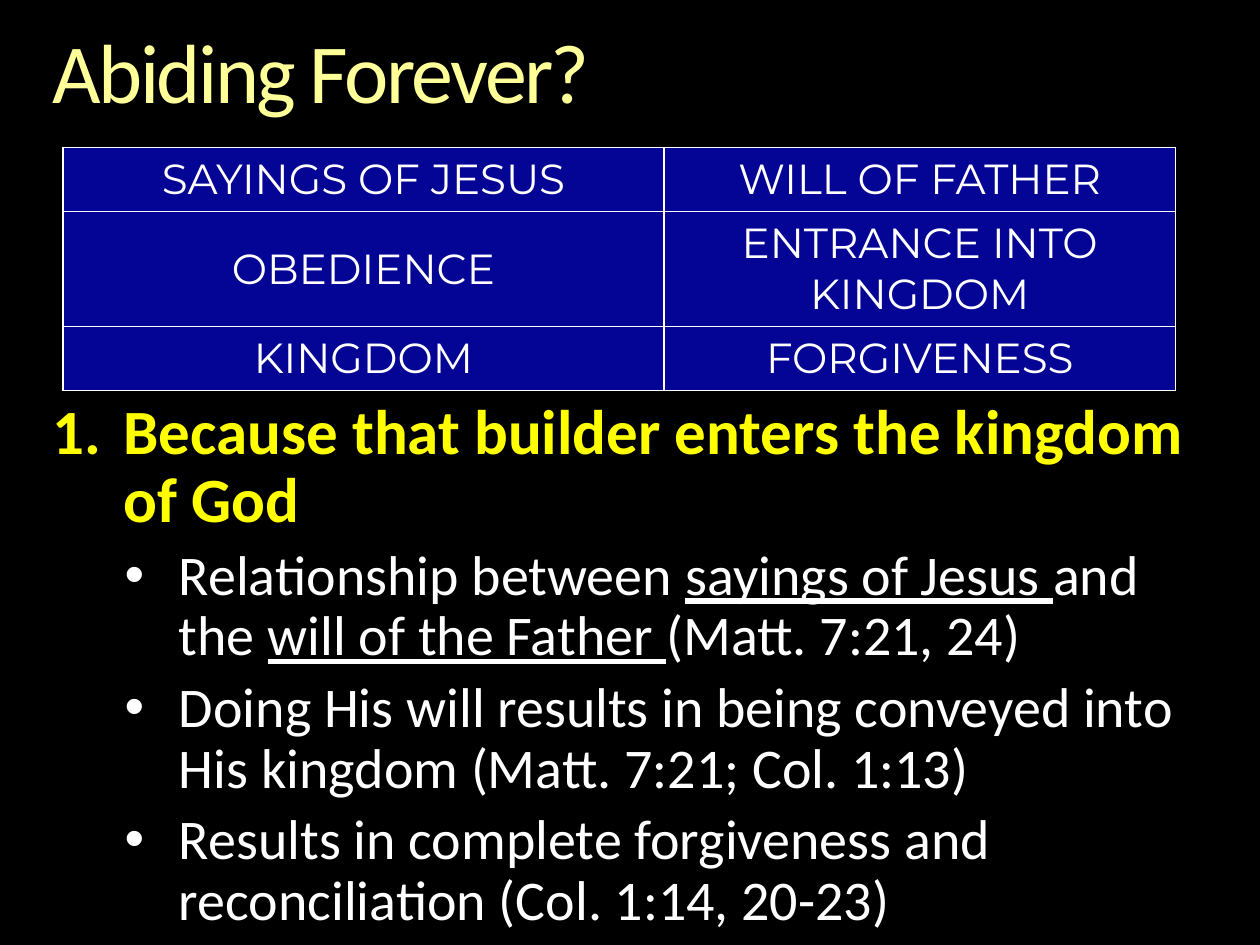
"""Build the 'Abiding Forever?' slide: a title, a comparison table and a numbered point."""
from dataclasses import dataclass
from typing import Any

from lxml import etree
from pptx import Presentation
from pptx import util as u
from pptx.dml.color import RGBColor
from pptx.enum import text
from pptx.oxml import ns

WIDTH, HEIGHT = u.Inches(10), u.Inches(7.5)
COLORS = {"back": "000000", "title": "FFFF99", "point": "FFFF00",
          "body": "FFFFFF", "cell": "050595", "border": "FFFFFF"}
FORMATS = {
    "title": {"name": "Calibri", "size": u.Pt(48)},
    "point": {"name": "Calibri", "size": u.Pt(36), "bold": True},
    "body": {"name": "Calibri", "size": u.Pt(32)},
    "cell": {"name": "Montserrat", "size": u.Pt(24)},
}
NO_INSETS = {f"margin_{side}": 0 for side in ("left", "top", "right", "bottom")}
COLUMN_SHARES = (0.54, 0.46)
ROW_HEIGHTS = (0.51, 0.91, 0.51)
ROWS = (
    ("SAYINGS OF JESUS", "WILL OF FATHER"),
    ("OBEDIENCE", "ENTRANCE INTO KINGDOM"),
    ("KINGDOM", "FORGIVENESS"),
)


@dataclass(frozen=True)
class Area:
    """A rectangle given as shares of the slide's size."""
    left: float
    top: float
    width: float
    height: float

    def lengths(self) -> tuple[int, ...]:
        """Return left, top, width and height in slide units."""
        return (int(self.left * WIDTH), int(self.top * HEIGHT),
                int(self.width * WIDTH), int(self.height * HEIGHT))


@dataclass(frozen=True)
class Marker:
    """A list marker with its text margin and hanging width in inches."""
    tag: str
    values: dict[str, str]
    margin: float
    hang: float


@dataclass(frozen=True)
class Line:
    """A paragraph whose spans alternate between plain and underlined."""
    spans: tuple[str, ...]
    style: str
    marker: Marker | None = None
    before: float = 0


TITLE_AREA = Area(0.042, 0.033, 0.917, 0.097)
TABLE_AREA = Area(0.05, 0.156, 0.883, 0.257)
BODY_AREA = Area(0.042, 0.423, 0.917, 0.577)
NUMBER = Marker("a:buAutoNum", {"type": "arabicPeriod"}, 0.56, 0.56)
BULLET = Marker("a:buChar", {"char": "•"}, 1, 0.43)
DETAILS = (
    ("Relationship between ", "sayings of Jesus ", "and the ",
     "will of the Father ", "(Matt. 7:21, 24)"),
    ("Doing His will results in being conveyed into His kingdom (Matt. 7:21; Col. 1:13)",),
    ("Results in complete forgiveness and reconciliation (Col. 1:14, 20-23)",),
)
BODY = [Line(("Because that builder enters the kingdom of God",), "point", NUMBER)]
BODY += [Line(spans, "body", BULLET, 6.4) for spans in DETAILS]


def apply(target: Any, values: dict[str, Any]) -> None:
    """Set each named attribute on the target."""
    for name, value in values.items():
        setattr(target, name, value)


def add_span(para: Any, words: str, style: str) -> Any:
    """Append a styled span to a paragraph."""
    span = para.add_run()
    span.text = words
    apply(span.font, FORMATS[style])
    span.font.color.rgb = RGBColor.from_string(COLORS[style])
    return span


def mark(para: Any, marker: Marker) -> None:
    """Give a paragraph its list marker and hanging indent."""
    props = para._p.get_or_add_pPr()
    props.set("marL", str(u.Inches(marker.margin)))
    props.set("indent", str(-u.Inches(marker.hang)))
    etree.SubElement(props, ns.qn("a:buFont"), typeface="Calibri" if marker is NUMBER else "Arial")
    etree.SubElement(props, ns.qn(marker.tag), marker.values)


def add_text(page: Any, area: Area, lines: list[Line]) -> Any:
    """Add a text box without insets and fill it with lines."""
    box = page.shapes.add_textbox(*area.lengths())
    frame = box.text_frame
    apply(frame, {**NO_INSETS, "word_wrap": True})
    for index, line in enumerate(lines):
        para = frame.add_paragraph() if index else frame.paragraphs[0]
        if line.marker:
            mark(para, line.marker)
        apply(para, {"line_spacing": 0.9, "space_before": u.Pt(line.before)})
        for place, words in enumerate(line.spans):
            span = add_span(para, words, line.style)
            if place % 2:
                span.font.underline = True
    return box


def outline(cell: Any) -> None:
    """Draw a one-point border on every side of a cell."""
    props = cell._tc.get_or_add_tcPr()
    for side in "LRTB":
        edge = etree.SubElement(props, ns.qn(f"a:ln{side}"), w=str(u.Pt(1)))
        fill = etree.SubElement(edge, ns.qn("a:solidFill"))
        etree.SubElement(fill, ns.qn("a:srgbClr"), val=COLORS["border"])


def add_grid(page: Any, area: Area) -> None:
    """Add the comparison table."""
    lengths = area.lengths()
    table = page.shapes.add_table(len(ROWS), len(COLUMN_SHARES), *lengths).table
    apply(table, {"first_row": False, "horz_banding": False})
    for column, share in zip(table.columns, COLUMN_SHARES):
        column.width = int(lengths[2] * share)
    for row, height, labels in zip(table.rows, ROW_HEIGHTS, ROWS):
        row.height = u.Inches(height)
        for cell, label in zip(row.cells, labels):
            outline(cell)
            cell.fill.solid()
            cell.fill.fore_color.rgb = RGBColor.from_string(COLORS["cell"])
            cell.vertical_anchor = text.MSO_ANCHOR.MIDDLE
            para = cell.text_frame.paragraphs[0]
            para.alignment = text.PP_ALIGN.CENTER
            span = add_span(para, label, "cell")
            span.font.color.rgb = RGBColor.from_string(COLORS["body"])


def main() -> None:
    """Build and save the deck."""
    deck = Presentation()
    apply(deck, {"slide_width": WIDTH, "slide_height": HEIGHT})
    page = deck.slides.add_slide(deck.slide_layouts[6])
    page.background.fill.solid()
    page.background.fill.fore_color.rgb = RGBColor.from_string(COLORS["back"])
    title = add_text(page, TITLE_AREA, [Line(("Abiding Forever?",), "title")])
    title.text_frame.paragraphs[0].runs[0].font._element.set("spc", "-150")
    add_text(page, BODY_AREA, BODY)
    add_grid(page, TABLE_AREA)
    deck.save("out.pptx")


if __name__ == "__main__":
    main()
